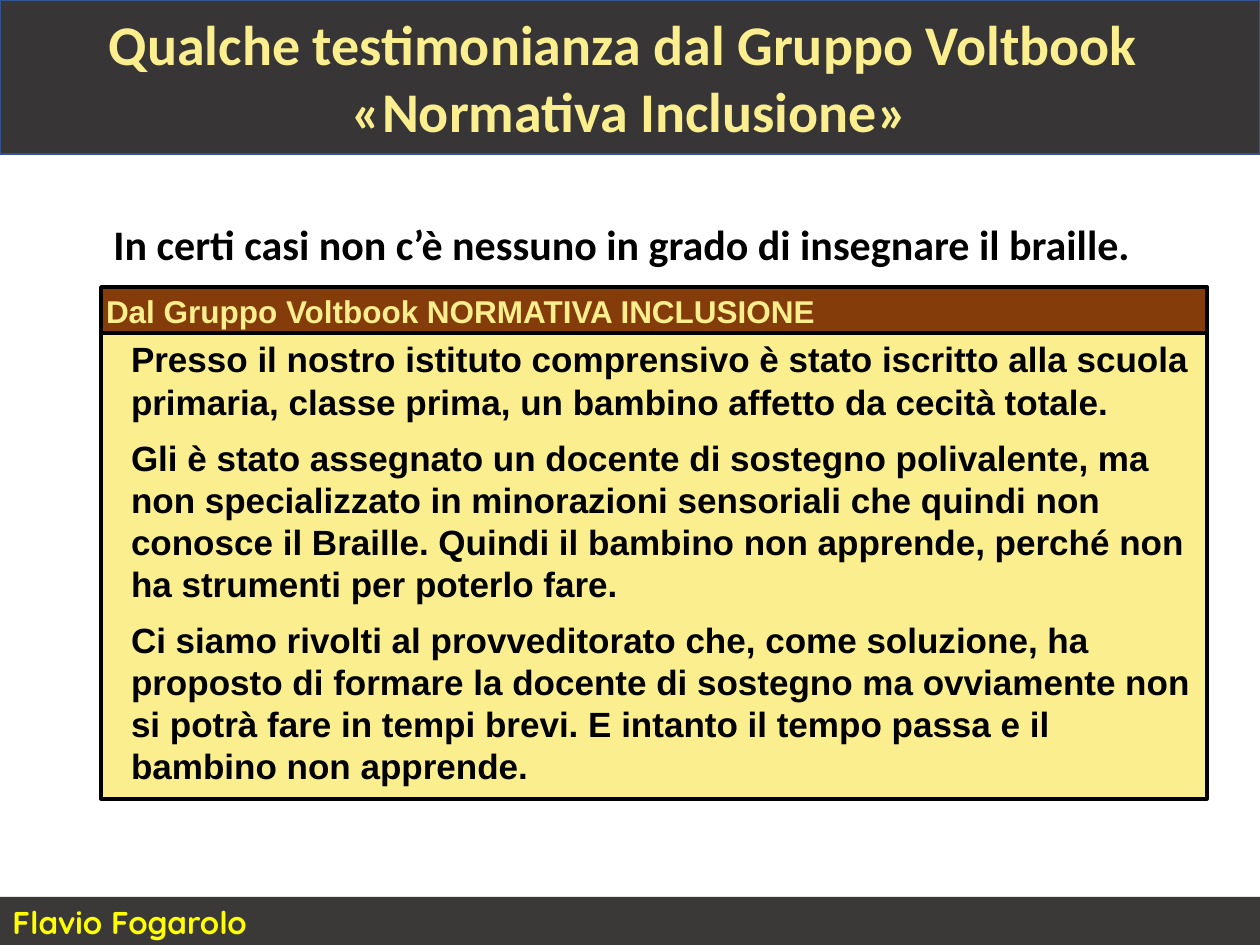
from pptx import Presentation, util as u
from pptx.dml.color import RGBColor
from pptx.enum import shapes, text

PX = 914400 // 126
YELLOW, BLACK, DARK = "FAEE8F", "000000", "373535"
CARD_LEFT, CARD_WIDTH = 101, 1106

TITLE = ["Qualche testimonianza dal Gruppo Voltbook ", "«Normativa Inclusione»"]
STATEMENT = "In certi casi non c’è nessuno in grado di insegnare il braille."
SOURCE = "Dal Gruppo Voltbook NORMATIVA INCLUSIONE"
TESTIMONY = [
    "Presso il nostro istituto comprensivo è stato iscritto alla scuola primaria, "
    "classe prima, un bambino affetto da cecità totale.",
    "Gli è stato assegnato un docente di sostegno polivalente, ma non specializzato "
    "in minorazioni sensoriali che quindi non conosce il Braille. Quindi il bambino "
    "non apprende, perché non ha strumenti per poterlo fare.",
    "Ci siamo rivolti al provveditorato che, come soluzione, ha proposto di formare "
    "la docente di sostegno ma ovviamente non si potrà fare in tempi brevi. E intanto "
    "il tempo passa e il bambino non apprende.",
]


def px(length):
    return u.Emu(length * PX)


def rgb(value):
    return RGBColor.from_string(value)


def add_box(slide, box, fill, line=None, line_width=1):
    shape = slide.shapes.add_shape(shapes.MSO_SHAPE.RECTANGLE, *map(px, box))
    shape.shadow.inherit = False
    shape.fill.solid()
    shape.fill.fore_color.rgb = rgb(fill)
    if line:
        shape.line.color.rgb = rgb(line)
        shape.line.width = u.Pt(line_width)
    else:
        shape.line.fill.background()
    return shape


def set_frame(shape, anchor=text.MSO_ANCHOR.TOP, margin=None):
    frame = shape.text_frame
    frame.word_wrap = True
    frame.vertical_anchor = anchor
    if margin is not None:
        frame.margin_left = frame.margin_right = px(margin)
        frame.margin_top = frame.margin_bottom = px(margin)
    return frame


def add_run(paragraph, words, size, font, color):
    run = paragraph.add_run()
    run.text = words
    run.font.size = u.Pt(size)
    run.font.name = font
    run.font.bold = True
    run.font.color.rgb = rgb(color)


def set_paragraph(paragraph, align=text.PP_ALIGN.LEFT, after=0, left=0, first=0):
    paragraph.alignment = align
    paragraph.space_after = u.Pt(after)
    properties = paragraph._p.get_or_add_pPr()
    properties.set("marL", str(px(left)))
    properties.set("indent", str(px(first)))


def add_footer(slide):
    frame = set_frame(add_box(slide, (0, 897, 1260, 50), "3B3838"))
    set_paragraph(frame.paragraphs[0])
    add_run(frame.paragraphs[0], "Flavio Fogarolo", 18, "Quicksand", "FFFF00")


def add_title(slide):
    shape = add_box(slide, (0, 0, 1260, 154), DARK, "325491")
    paragraph = set_frame(shape, text.MSO_ANCHOR.MIDDLE).paragraphs[0]
    set_paragraph(paragraph, text.PP_ALIGN.CENTER)
    for index, words in enumerate(TITLE):
        if index:
            paragraph.add_line_break()
        add_run(paragraph, words, 32, "Calibri", YELLOW)


def add_statement(slide):
    shape = slide.shapes.add_textbox(*map(px, (CARD_LEFT, 212, CARD_WIDTH, 63)))
    paragraph = set_frame(shape).paragraphs[0]
    set_paragraph(paragraph, after=8)
    add_run(paragraph, STATEMENT, 24, "Calibri", BLACK)


def add_testimony(slide):
    body = add_box(slide, (CARD_LEFT, 333, CARD_WIDTH, 466), YELLOW, BLACK, 2)
    frame = set_frame(body, margin=5)
    for index, words in enumerate(TESTIMONY):
        paragraph = frame.add_paragraph() if index else frame.paragraphs[0]
        set_paragraph(paragraph, after=8, left=25)
        add_run(paragraph, words, 20, "Arial", BLACK)

    header = add_box(slide, (CARD_LEFT, 287, CARD_WIDTH, 46), "843C0B", BLACK, 2)
    paragraph = set_frame(header, margin=5).paragraphs[0]
    set_paragraph(paragraph, after=8, left=13, first=-13)
    add_run(paragraph, SOURCE, 18, "Arial", YELLOW)


def main():
    presentation = Presentation()
    presentation.slide_width, presentation.slide_height = px(1260), px(945)
    slide = presentation.slides.add_slide(presentation.slide_layouts[6])
    add_footer(slide)
    add_title(slide)
    add_statement(slide)
    add_testimony(slide)
    presentation.save("out.pptx")


if __name__ == "__main__":
    main()
